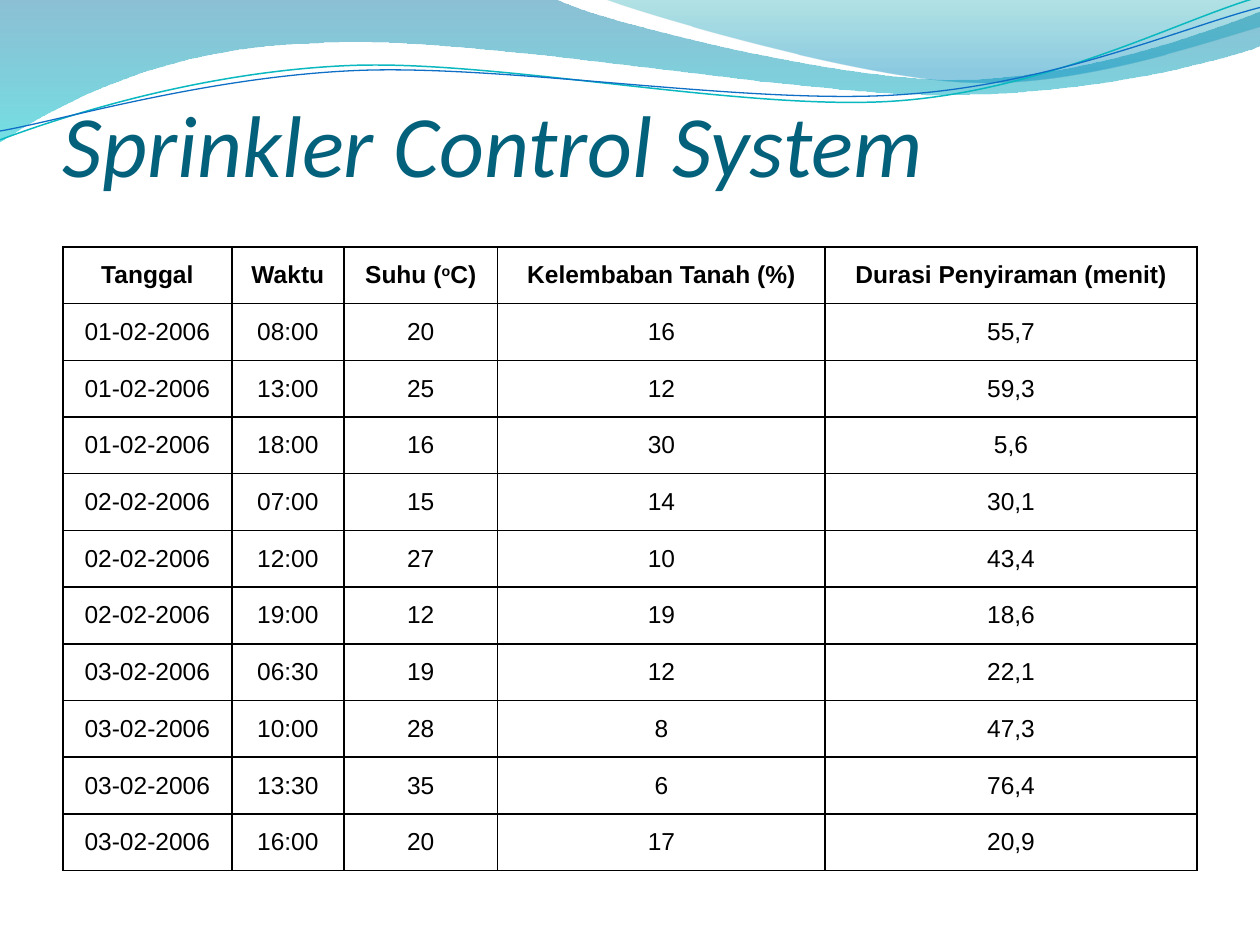
from dataclasses import dataclass
from math import cos, radians, sin

from lxml.etree import SubElement
from pptx import Presentation
from pptx.dml.color import RGBColor
from pptx.enum.text import MSO_ANCHOR as Anchor, PP_ALIGN as Align
from pptx.oxml.ns import qn
from pptx.util import Inches, Pt


@dataclass(frozen=True)
class Theme:
    title_font: str = "Calibri"
    table_font: str = "Arial"
    title_size: float = 50
    table_size: float = 14
    border_width: float = 1
    title_color: str = "04617B"
    ink: str = "000000"
    paper: str = "FFFFFF"
    teal_line: str = "0AB8BF"
    blue_line: str = "0F6FC6"
    # Gradient stops: position, colour, opacity in percent
    wide_wave: tuple = ((0, "0074A1", 45), (1, "00C6CF", 55))
    right_wave: tuple = ((0, "00A1A9", 30), (0.8, "008BBF", 45))


# Outlines in inches: a pair is a straight step, six numbers are a cubic curve.
WIDE_WAVE = [(0, 0), (4.4, -0.01), (4.76, 0.17, 6.64, 0.63, 7.58, 0.63),
             (8.53, 0.63, 9.58, 0.26, 10, 0.09), (10.01, 0.36),
             (9.83, 0.44, 8.7, 0.76, 7.46, 0.75),
             (6.22, 0.75, 3.82, 0.28, 2.57, 0.34),
             (1.29, 0.36, 0.46, 0.83, -0.01, 1.13), (0, 0)]
RIGHT_WAVE = [(4.79, -0.01), (5.09, 0.11, 6.82, 0.62, 7.69, 0.65),
              (8.56, 0.69, 9.61, 0.32, 10, 0.21), (10, 0), (4.79, -0.01)]
TEAL_CURVE = [(0, 1.11), (0.48, 0.93, 1.58, 0.57, 2.77, 0.52),
              (3.95, 0.47, 5.93, 0.89, 7.13, 0.8),
              (8.33, 0.71, 9.38, 0.15, 9.98, -0.02)]
BLUE_CURVE = [(0, 1.04), (0.47, 0.96, 1.64, 0.61, 2.83, 0.56),
              (4.03, 0.51, 5.97, 0.84, 7.17, 0.75),
              (8.36, 0.67, 9.41, 0.21, 10, 0.06)]
CURVE_TILT = -2.7

# Text between carets is superscript.
HEADINGS = ["Tanggal", "Waktu", "Suhu (^o^C)", "Kelembaban Tanah (%)",
            "Durasi Penyiraman (menit)"]
READINGS = [
    ["01-02-2006", "08:00", "20", "16", "55,7"],
    ["01-02-2006", "13:00", "25", "12", "59,3"],
    ["01-02-2006", "18:00", "16", "30", "5,6"],
    ["02-02-2006", "07:00", "15", "14", "30,1"],
    ["02-02-2006", "12:00", "27", "10", "43,4"],
    ["02-02-2006", "19:00", "12", "19", "18,6"],
    ["03-02-2006", "06:30", "19", "12", "22,1"],
    ["03-02-2006", "10:00", "28", "8", "47,3"],
    ["03-02-2006", "13:30", "35", "6", "76,4"],
    ["03-02-2006", "16:00", "20", "17", "20,9"],
]
COLUMN_WIDTHS = [1.34, 0.89, 1.22, 2.6, 2.95]
ROW_HEIGHT = 0.45
HANGING_INDENT = 0.38


def pairs(segment):
    return list(zip(segment[::2], segment[1::2]))


def rotate(outline, degrees, center):
    """Turn every point of an outline clockwise about a center."""
    c, s = cos(radians(degrees)), sin(radians(degrees))
    center_x, center_y = center
    turned = []
    for segment in outline:
        offsets = [(x - center_x, y - center_y) for x, y in pairs(segment)]
        turned.append(tuple(value for dx, dy in offsets for value in
                            (center_x + dx * c - dy * s,
                             center_y + dx * s + dy * c)))
    return turned


class SlideBuilder:
    def __init__(self, slide, theme):
        self.slide = slide
        self.theme = theme

    def freeform(self, outline, close):
        points = [(Inches(x), Inches(y))
                  for segment in outline for x, y in pairs(segment)]
        builder = self.slide.shapes.build_freeform(*points[0])
        builder.add_line_segments(points[1:], close=close)
        shape = builder.convert_to_shape()
        shape.shadow.inherit = False
        self.bend(shape, outline)
        return shape

    def bend(self, shape, outline):
        """Join the three steps of each curved segment into one cubic curve."""
        steps = iter(list(shape._element.iter(qn("a:lnTo"))))
        for segment in outline[1:]:
            step = next(steps)
            if len(segment) == 6:
                step.tag = qn("a:cubicBezTo")
                for follower in (next(steps), next(steps)):
                    step.append(follower[0])
                    follower.getparent().remove(follower)

    def wave(self, outline, stops):
        shape = self.freeform(outline, close=True)
        shape.line.fill.background()
        shape.fill.gradient()
        shape.fill.gradient_angle = 270
        for stop, (position, color, _) in zip(shape.fill.gradient_stops, stops):
            stop.position = position
            stop.color.rgb = RGBColor.from_string(color)
        colors = shape.fill._xPr.iter(qn("a:srgbClr"))
        for color_node, (_, _, opacity) in zip(colors, stops):
            SubElement(color_node, qn("a:alpha"), val=str(opacity * 1000))

    def curve(self, outline, center, color, width):
        level = rotate(outline, -CURVE_TILT, center)
        shape = self.freeform(level, close=False)
        shape.rotation = CURVE_TILT
        shape.fill.background()
        shape.line.color.rgb = RGBColor.from_string(color)
        shape.line.width = Pt(width)

    def style_font(self, font, name, size, color):
        font.name = name
        font.size = Pt(size)
        font.color.rgb = RGBColor.from_string(color)

    def title(self, text, left, top, width, height):
        box = self.slide.shapes.add_textbox(
            Inches(left), Inches(top), Inches(width), Inches(height))
        frame = box.text_frame
        frame.word_wrap = True
        frame.vertical_anchor = Anchor.BOTTOM
        frame.margin_left = frame.margin_right = frame.margin_bottom = 0
        frame.margin_top = Inches(0.05)
        frame.text = text
        font = frame.paragraphs[0].runs[0].font
        self.style_font(font, self.theme.title_font, self.theme.title_size,
                        self.theme.title_color)
        font.italic = True

    def table(self, rows, left, top, widths, row_height):
        table = self.slide.shapes.add_table(
            len(rows), len(widths), Inches(left), Inches(top),
            Inches(sum(widths)), Inches(row_height * len(rows))).table
        table.horz_banding = False
        for column, width in zip(table.columns, widths):
            column.width = Inches(width)
        for row_index, texts in enumerate(rows):
            table.rows[row_index].height = Inches(row_height)
            for column_index, text in enumerate(texts):
                self.cell(table.cell(row_index, column_index), text,
                          bold=row_index == 0)

    def cell(self, cell, text, bold):
        self.borders(cell)
        cell.fill.solid()
        cell.fill.fore_color.rgb = RGBColor.from_string(self.theme.paper)
        cell.vertical_anchor = Anchor.MIDDLE
        paragraph = cell.text_frame.paragraphs[0]
        paragraph.alignment = Align.CENTER
        properties = paragraph._p.get_or_add_pPr()
        properties.set("marL", str(Inches(HANGING_INDENT)))
        properties.set("indent", str(-Inches(HANGING_INDENT)))
        for index, part in enumerate(text.split("^")):
            run = paragraph.add_run()
            run.text = part
            self.style_font(run.font, self.theme.table_font,
                            self.theme.table_size, self.theme.ink)
            run.font.bold = bold
            if index % 2:
                run._r.get_or_add_rPr().set("baseline", "30000")

    def borders(self, cell):
        properties = cell._tc.get_or_add_tcPr()
        for side in ("lnL", "lnR", "lnT", "lnB"):
            border = SubElement(properties, qn(f"a:{side}"),
                                w=str(Pt(self.theme.border_width)))
            fill = SubElement(border, qn("a:solidFill"))
            SubElement(fill, qn("a:srgbClr"), val=self.theme.ink)


def main():
    presentation = Presentation()
    presentation.slide_width, presentation.slide_height = Inches(10), Inches(7.5)
    theme = Theme()
    builder = SlideBuilder(
        presentation.slides.add_slide(presentation.slide_layouts[6]), theme)
    builder.wave(WIDE_WAVE, theme.wide_wave)
    builder.wave(RIGHT_WAVE, theme.right_wave)
    builder.curve(TEAL_CURVE, (4.99, 0.58), theme.teal_line, 0.85)
    builder.curve(BLUE_CURVE, (5, 0.59), theme.blue_line, 0.75)
    builder.title("Sprinkler Control System", 0.5, 0.3, 9, 1.25)
    builder.table([HEADINGS, *READINGS], 0.5, 1.96, COLUMN_WIDTHS, ROW_HEIGHT)
    presentation.save("out.pptx")


if __name__ == "__main__":
    main()
